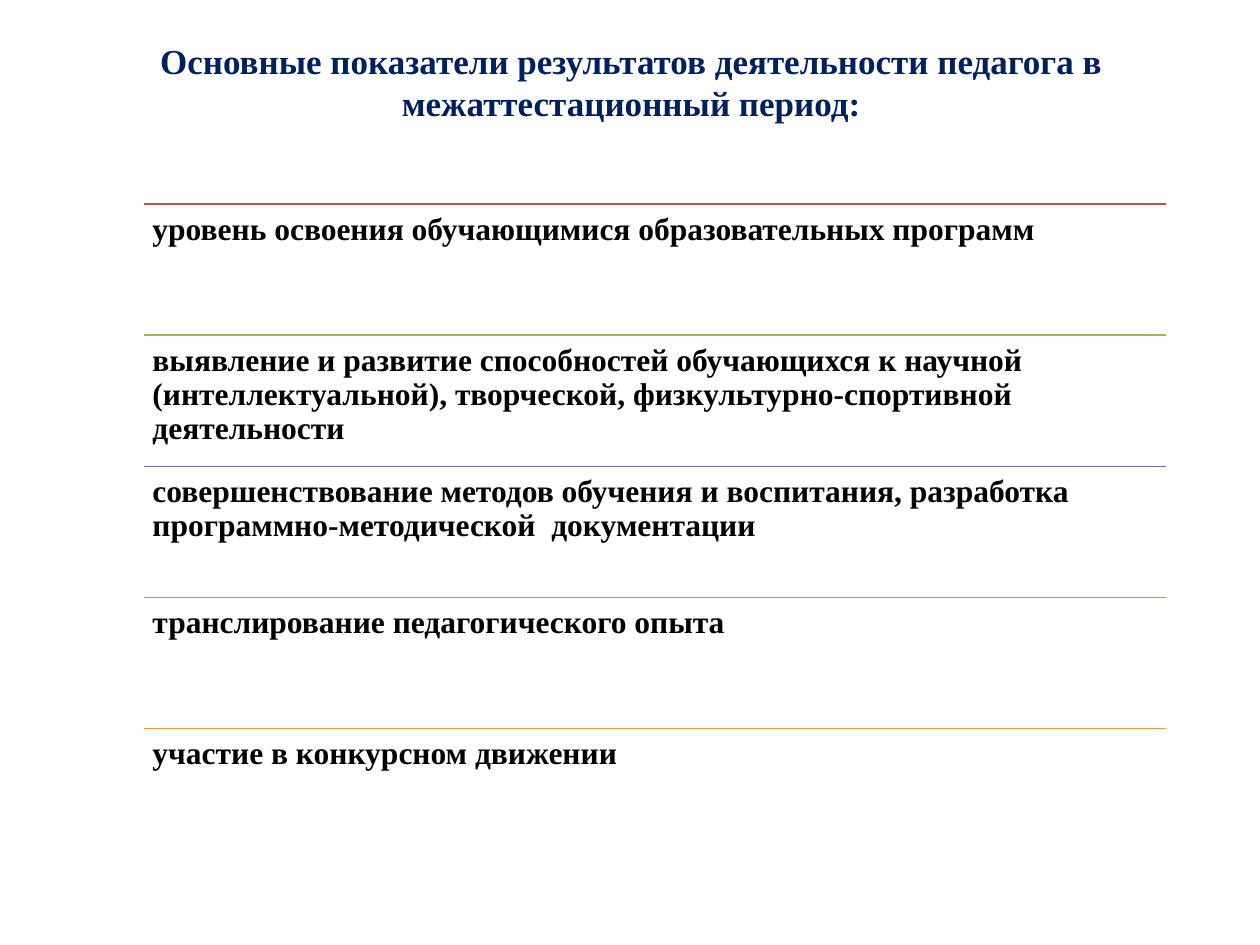
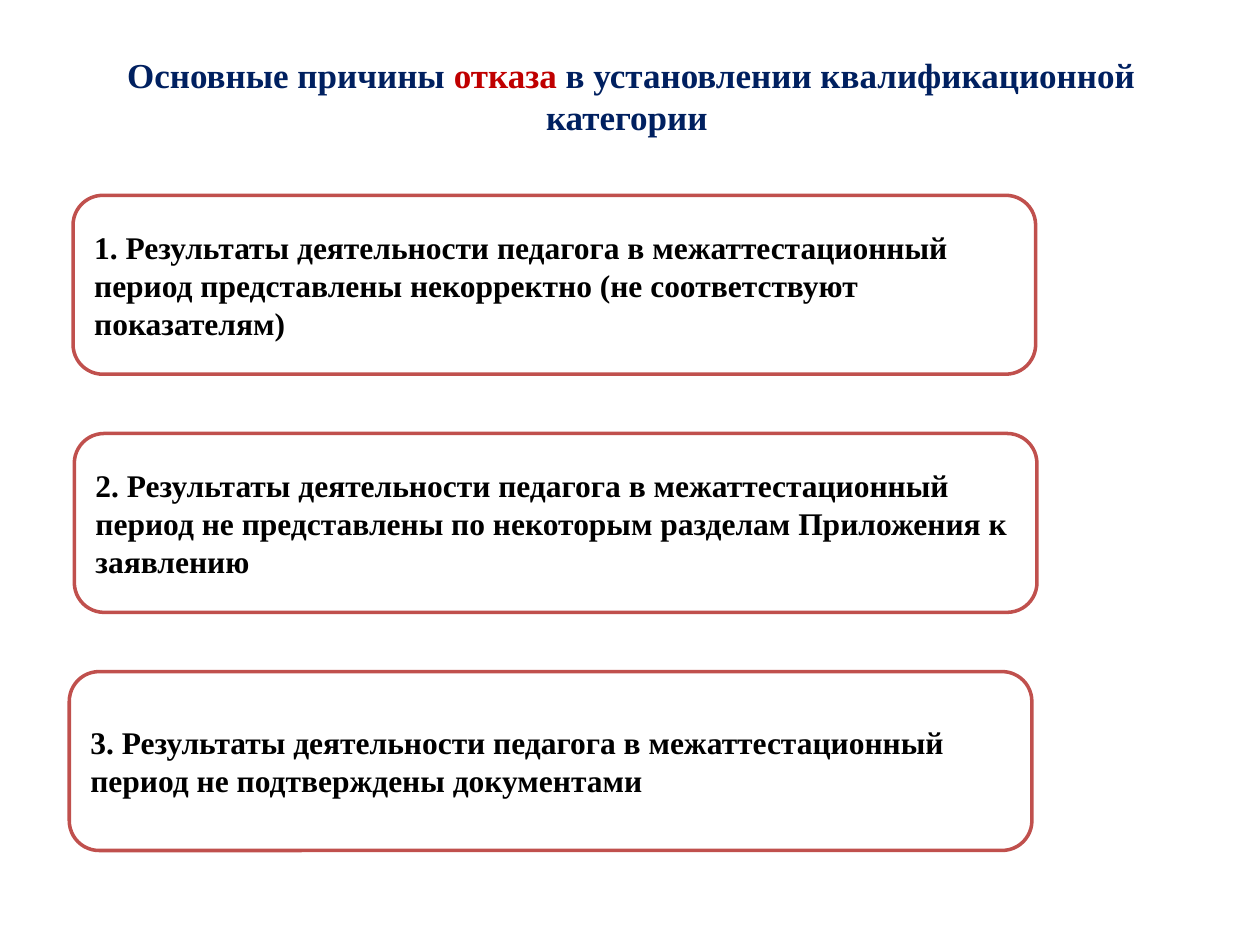
from dataclasses import dataclass

from lxml.etree import SubElement
from pptx import Presentation
from pptx.dml.color import RGBColor
from pptx.enum.shapes import MSO_CONNECTOR, MSO_SHAPE
from pptx.enum.text import MSO_ANCHOR, PP_ALIGN
from pptx.oxml.ns import qn
from pptx.util import Inches, Pt


@dataclass(frozen=True)
class Theme:
    """Colours, font and type sizes shared by the slides."""

    font: str = "Times New Roman"
    title_size: int = 20
    body_size: int = 18
    title: str = "002060"
    alert: str = "C00000"
    text: str = "000000"
    box_fill: str = "FFFFFF"
    box_line: str = "C0504D"
    rules: tuple = ("C0504D", "9BBB59", "8064A2", "4BACC6", "F79646")


THEME = Theme()

INDICATORS = (
    "уровень освоения обучающимися образовательных программ",
    "выявление и развитие способностей обучающихся к научной "
    "(интеллектуальной), творческой, физкультурно-спортивной деятельности",
    "совершенствование методов обучения и воспитания, разработка "
    "программно-методической  документации",
    "транслирование педагогического опыта",
    "участие в конкурсном движении",
)

REFUSAL_REASONS = (
    (0.58, "1. Результаты деятельности педагога в межаттестационный период "
           "представлены некорректно (не соответствуют показателям)"),
    (0.59, "2. Результаты деятельности педагога в межаттестационный период "
           "не представлены по некоторым разделам Приложения к заявлению"),
    (0.55, "3. Результаты деятельности педагога в межаттестационный период "
           "не подтверждены документами"),
)


def format_run(run, size, color):
    """Apply the bold theme font to a run."""
    run.font.name = THEME.font
    run.font.size = Pt(size)
    run.font.bold = True
    run.font.color.rgb = RGBColor.from_string(color)


def fill_body(text_frame, text):
    """Write one left-aligned body paragraph and return it."""
    text_frame.word_wrap = True
    text_frame.text = text
    paragraph = text_frame.paragraphs[0]
    paragraph.alignment = PP_ALIGN.LEFT
    format_run(paragraph.runs[0], THEME.body_size, THEME.text)
    return paragraph


def add_titled_slide(presentation, top, parts):
    """Add a title-only slide whose title is made of text and colour parts."""
    slide = presentation.slides.add_slide(presentation.slide_layouts[5])
    title = slide.shapes.title
    title.left, title.top = Inches(0.51), Inches(top)
    title.width, title.height = Inches(9), Inches(1.25)
    title.text_frame.vertical_anchor = MSO_ANCHOR.MIDDLE
    paragraph = title.text_frame.paragraphs[0]
    paragraph.alignment = PP_ALIGN.CENTER
    for text, color in parts:
        run = paragraph.add_run()
        run.text = text
        format_run(run, THEME.title_size, color)
    return slide


def add_rule(slide, left, top, width, color):
    """Draw a thin horizontal line without a shadow."""
    rule = slide.shapes.add_connector(
        MSO_CONNECTOR.STRAIGHT,
        Inches(left), Inches(top), Inches(left + width), Inches(top))
    rule.line.color.rgb = RGBColor.from_string(color)
    rule.line.width = Pt(0.75)
    SubElement(rule._element.spPr, qn("a:effectLst"))


def add_ruled_list(slide, items):
    """Stack equal rows of text, each under its own coloured line."""
    left, first_top, width, row_height = 1.14, 1.62, 8.11, 1.04
    for index, (text, color) in enumerate(zip(items, THEME.rules)):
        top = first_top + index * row_height
        add_rule(slide, left, top, width, color)
        text_box = slide.shapes.add_textbox(
            Inches(left), Inches(top), Inches(width), Inches(row_height))
        text_frame = text_box.text_frame
        text_frame.margin_left = text_frame.margin_right = Inches(0.07)
        text_frame.margin_top = text_frame.margin_bottom = Inches(0.07)
        fill_body(text_frame, text).line_spacing = 0.9


def add_reason_box(slide, left, top, text):
    """Draw an outlined rounded box holding one reason."""
    box = slide.shapes.add_shape(
        MSO_SHAPE.ROUNDED_RECTANGLE,
        Inches(left), Inches(top), Inches(7.64), Inches(1.42))
    box.shadow.inherit = False
    box.fill.solid()
    box.fill.fore_color.rgb = RGBColor.from_string(THEME.box_fill)
    box.line.color.rgb = RGBColor.from_string(THEME.box_line)
    box.line.width = Pt(2)
    box.text_frame.vertical_anchor = MSO_ANCHOR.MIDDLE
    fill_body(box.text_frame, text)


def main():
    """Build both slides and save the presentation."""
    presentation = Presentation()
    presentation.slide_width, presentation.slide_height = Inches(10), Inches(7.5)

    indicators_slide = add_titled_slide(presentation, 0.02, [
        ("Основные показатели результатов деятельности педагога "
         "в межаттестационный период:", THEME.title),
    ])
    add_ruled_list(indicators_slide, INDICATORS)

    refusal_slide = add_titled_slide(presentation, 0.13, [
        ("Основные причины ", THEME.title),
        ("отказа", THEME.alert),
        (" в установлении квалификационной категории ", THEME.title),
    ])
    for index, (left, text) in enumerate(REFUSAL_REASONS):
        add_reason_box(refusal_slide, left, 1.55 + index * 1.89, text)

    presentation.save("out.pptx")


if __name__ == "__main__":
    main()
